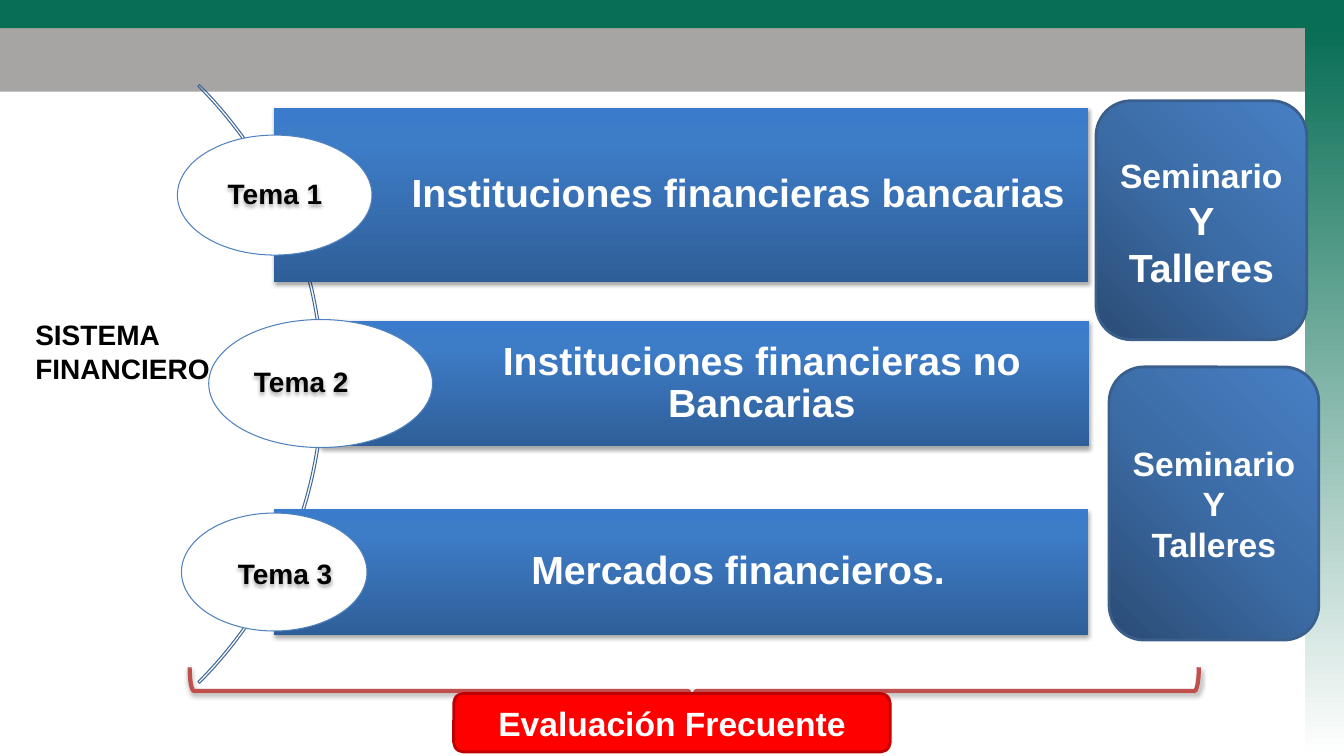
from pptx import Presentation
from pptx.dml.color import RGBColor
from pptx.enum.shapes import MSO_SHAPE
from pptx.enum.text import MSO_ANCHOR, MSO_AUTO_SIZE, PP_ALIGN
from pptx.oxml import parse_xml
from pptx.oxml.ns import nsdecls
from pptx.util import Inches, Pt

RECT, ROUND, OVAL = MSO_SHAPE.RECTANGLE, MSO_SHAPE.ROUNDED_RECTANGLE, MSO_SHAPE.OVAL
ARC, BRACE = MSO_SHAPE.BLOCK_ARC, MSO_SHAPE.RIGHT_BRACE
LEFT, CENTER = PP_ALIGN.LEFT, PP_ALIGN.CENTER
TOP, MIDDLE = MSO_ANCHOR.TOP, MSO_ANCHOR.MIDDLE
NO_FIT = MSO_AUTO_SIZE.NONE

COLORS = {
    "white": "FFFFFF", "black": "000000", "gray": "A6A5A4", "green": "086E54",
    "arc": "3F6797", "oval": "4F81BD", "card": "3A5F8C",
    "brace": "C0504D", "red": "FF0000", "dark_red": "C00000",
}
SIDE_FADE = ([(0, "086E54"), (100, "FFFFFF")], 90)
BAR_FADE = ([(0, "2F5F99"), (80, "3D7CC7"), (100, "3A7CCB")], 270)
CARD_FADE = ([(0, "2A4C75"), (50, "3C6CA6"), (100, "4780C5")], 315)


def rgb(name):
    return RGBColor.from_string(COLORS[name])


def add_run(p, text, size=28, color="white", bold=True, font="Arial"):
    r = p.add_run()
    r.text = text
    r.font.name, r.font.size, r.font.bold = font, Pt(size), bold
    r.font.color.rgb = rgb(color)


def write(tf, paragraphs, align=CENTER, anchor=MIDDLE, spacing=None, wrap=True, **font):
    """Each paragraph is a list of (text, size) runs."""
    tf.word_wrap, tf.vertical_anchor, tf.auto_size = wrap, anchor, NO_FIT
    for i, runs in enumerate(paragraphs):
        p = tf.add_paragraph() if i else tf.paragraphs[0]
        p.alignment = align
        if spacing:
            p.line_spacing = spacing
        for text, size in runs:
            add_run(p, text, size, **font)


def set_gradient(sp, stops, angle):
    gs = "".join(f'<a:gs pos="{pos * 1000}"><a:srgbClr val="{color}"/></a:gs>'
                 for pos, color in stops)
    sp.fill.background()
    no_fill = sp.element.spPr.find(".//{*}noFill")
    grad = parse_xml(f'<a:gradFill {nsdecls("a")} rotWithShape="1"><a:gsLst>{gs}</a:gsLst>'
                     f'<a:lin ang="{angle * 60000}" scaled="0"/></a:gradFill>')
    no_fill.getparent().replace(no_fill, grad)


def set_shadow(sp):
    """Soft black shadow straight below the shape."""
    sp.shadow.inherit = False
    sp.element.spPr.find("{*}effectLst").append(parse_xml(
        f'<a:outerShdw {nsdecls("a")} blurRad="{Pt(3.1)}" dist="{Pt(1.8)}" dir="5400000" '
        'rotWithShape="0"><a:srgbClr val="000000"><a:alpha val="35000"/></a:srgbClr>'
        '</a:outerShdw>'))


class Deck:
    def __init__(self):
        self.prs = Presentation()
        self.prs.slide_width, self.prs.slide_height = Inches(13.33), Inches(7.5)
        self.s = self.prs.slides.add_slide(self.prs.slide_layouts[5])

    def title(self, text, x, y, w, h):
        sp = self.s.shapes.title
        sp.left, sp.top, sp.width, sp.height = map(Inches, (x, y, w, h))
        write(sp.text_frame, [[(text, 20)]], align=LEFT, anchor=TOP, color="black")

    def shape(self, kind, x, y, w, h, fill=None, fade=None, line=None, width=0.75,
              adj=(), shadow=False):
        sp = self.s.shapes.add_shape(kind, *map(Inches, (x, y, w, h)))
        sp.shadow.inherit = False
        if fade:
            set_gradient(sp, *fade)
        elif fill:
            sp.fill.solid()
            sp.fill.fore_color.rgb = rgb(fill)
        else:
            sp.fill.background()
        if line:
            sp.line.color.rgb, sp.line.width = rgb(line), Pt(width)
        else:
            sp.line.fill.background()
        for i, value in enumerate(adj):
            sp.adjustments[i] = value
        if shadow:
            set_shadow(sp)
        return sp

    def bar(self, text, x, y, w, h):
        sp = self.shape(RECT, x, y, w, h, fade=BAR_FADE, shadow=True)
        tf = sp.text_frame
        tf.margin_left = Inches(1.21)
        tf.margin_right = tf.margin_top = tf.margin_bottom = Inches(0.08)
        write(tf, [[(text, 28)]], spacing=0.9)

    def label(self, text, x, y):
        sp = self.s.shapes.add_textbox(*map(Inches, (x, y, 1.25, 0.44)))
        write(sp.text_frame, [[(text, 20)]], align=LEFT, anchor=TOP, wrap=False,
              color="black")
        set_shadow(sp)

    def card(self, paragraphs, x, y, w, h):
        sp = self.shape(ROUND, x, y, w, h, fade=CARD_FADE, line="card", width=2)
        write(sp.text_frame, paragraphs)


def main():
    deck = Deck()
    deck.title("SISTEMA FINANCIERO", 0.25, 3.1, 2.2, 0.77)

    deck.shape(RECT, 0, 0.28, 13.33, 0.63, fill="gray")
    deck.shape(RECT, 0, 0, 13.33, 0.28, fill="green")
    deck.shape(RECT, 12.94, 0.28, 0.4, 7.22, fade=SIDE_FADE)

    deck.shape(ARC, -5.19, -0.39, 8.4, 8.4, line="arc", adj=(189, 27, 0.003))
    topics = [
        ("Instituciones financieras bancarias", (2.72, 1.07, 8.07, 1.73),
         (1.76, 1.34, 1.93, 1.19), (2.16, 1.7)),
        ("Instituciones financieras no Bancarias", (3.18, 3.18, 7.62, 1.25),
         (2.07, 3.17, 2.22, 1.27), (2.42, 3.57)),
        ("Mercados financieros.", (2.72, 5.05, 8.07, 1.25),
         (1.8, 5.09, 1.84, 1.17), (2.26, 5.47)),
    ]
    for number, (text, bar, oval, label) in enumerate(topics, 1):
        deck.bar(text, *bar)
        deck.shape(OVAL, *oval, fill="white", line="oval")
        deck.label(f"Tema {number}", *label)

    deck.card([[("Seminario", 24), (" Y", 28)], [("Talleres", 28)]], 10.87, 1, 2.09, 2.37)
    deck.card([[("Seminario Y", 24)], [("Talleres", 24)]], 11, 3.64, 2.08, 2.71)

    brace = deck.shape(BRACE, 6.65, 1.85, 0.47, 10.01, line="brace", width=3,
                       adj=(0.09, 0.502), shadow=True)
    brace.rotation = 90
    sp = deck.shape(ROUND, 4.5, 6.88, 4.33, 0.58, fill="red", line="dark_red", width=2)
    write(sp.text_frame, [[("Evaluación Frecuente", 24)]])

    deck.prs.save("out.pptx")


if __name__ == "__main__":
    main()
